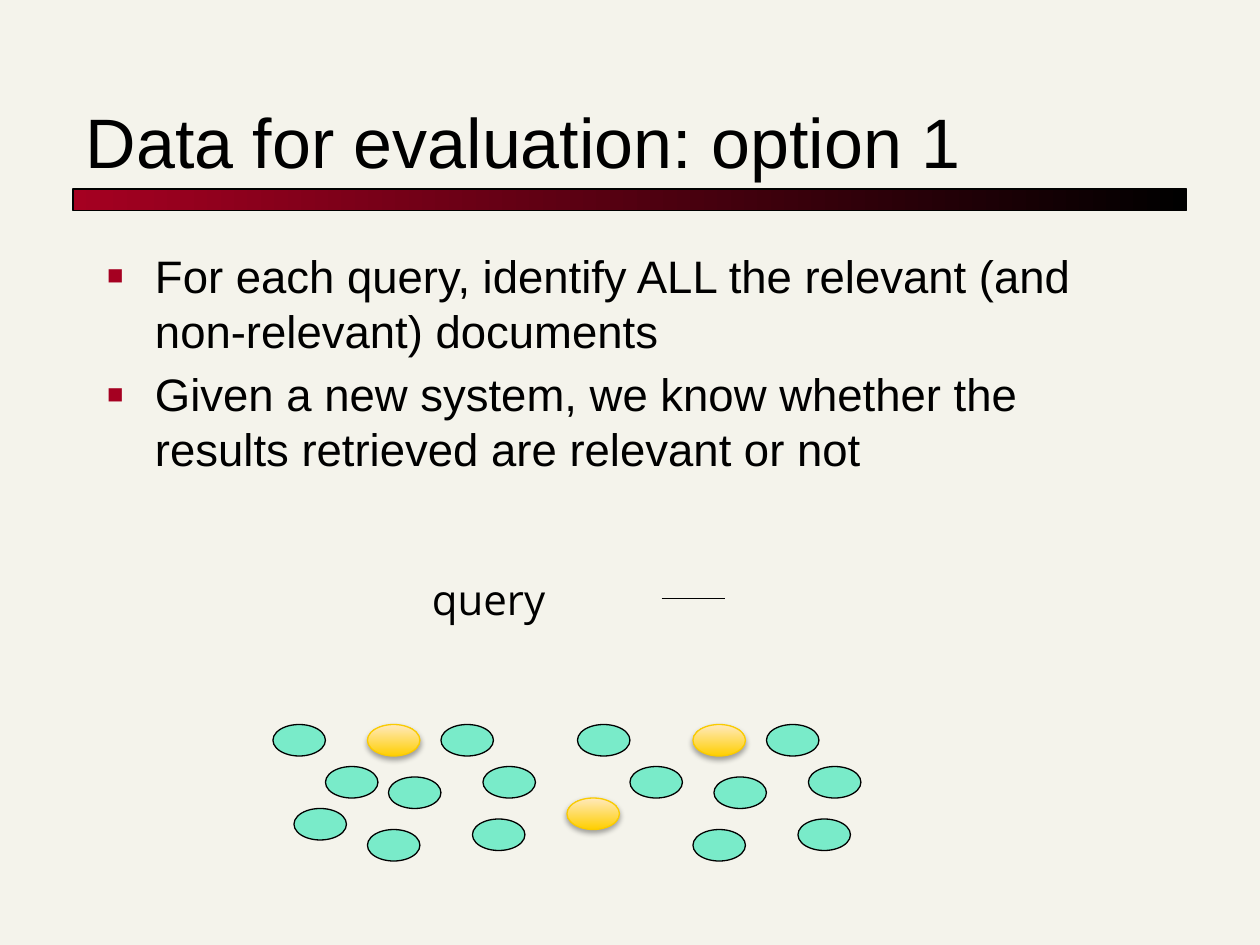
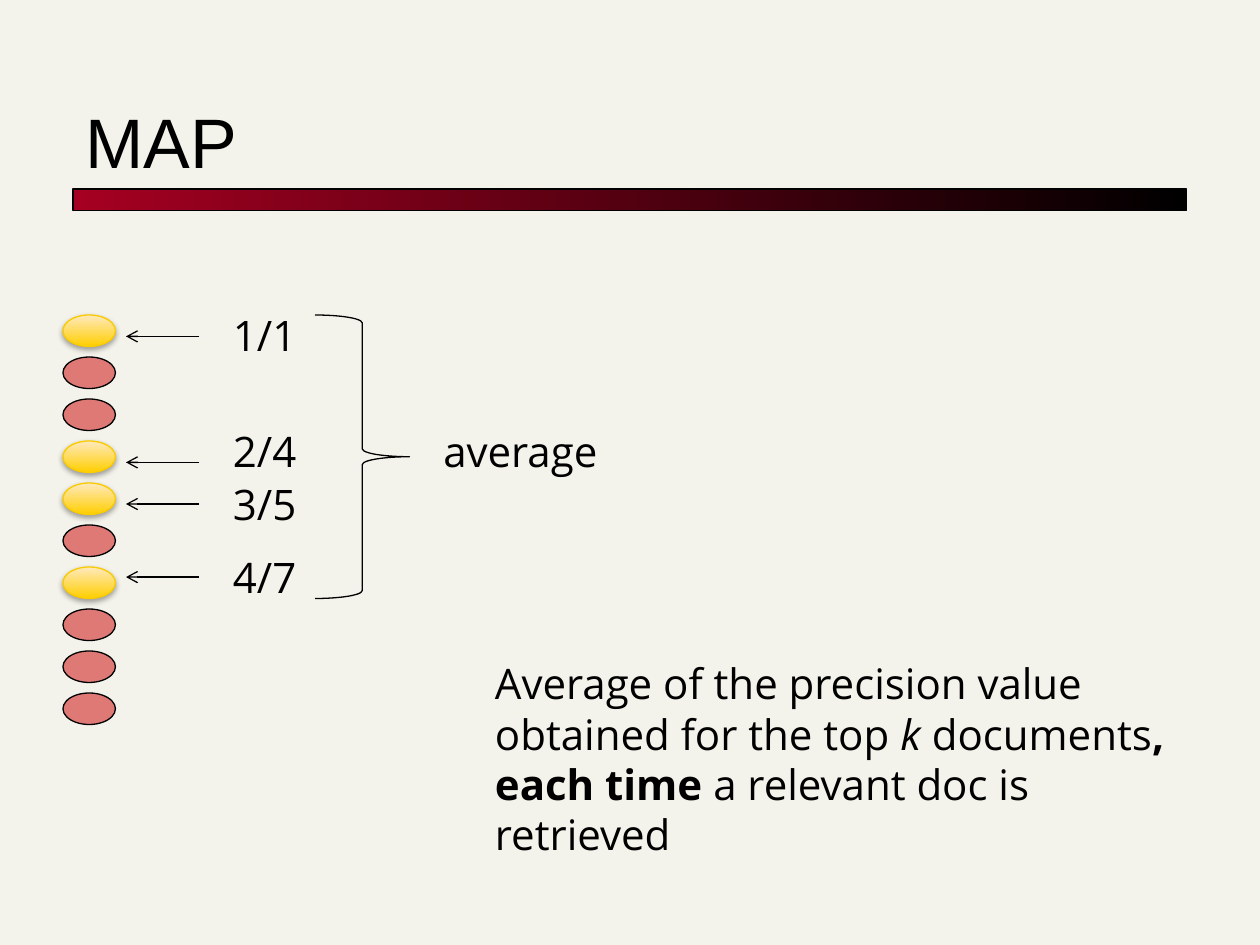
from lxml import etree
from pptx import Presentation
from pptx import util as u
from pptx.dml import color
from pptx.enum import shapes, text
from pptx.oxml import ns

HUES = {"page": "F4F3EB", "ink": "000000", "wine": "A50021", "mint": "00E4A8",
        "red": "CC0000", "gold": "FFCF01", "pale": "FFE9BD", "rim": "FACB00"}
HEAD, BODY = "Arial", "Open Sans"
UNIT = 1 / 12

OPTION = "Data for evaluation: option 1"
POINTS = ["For each query, identify ALL the relevant (and non-relevant) documents",
          "Given a new system, we know whether the results retrieved are relevant or not"]
GOOD = [(35, 69), (54, 76), (66, 69)]
OTHER = [(42, 69), (46, 73), (37, 74), (31, 73), (28, 77), (26, 69), (35, 79),
         (55, 69), (45, 78), (60, 73), (73, 69), (77, 73), (68, 74), (66, 79), (76, 78)]

COUNT = 10
RANKS = [(1, "1/1", 2.67, 2.41), (4, "2/4", 3.67, 3.33),
         (5, "3/5", 4, 3.75), (7, "4/7", 4.58, 4.33)]
MEANING = [["Average of the precision value"],
           ["obtained for the top ", ("k", "i"), " documents", (",", "b")],
           [("each time ", "b"), "a relevant doc is retrieved"]]


def rgb(name):
    return color.RGBColor.from_string(HUES[name])


def inches(*sizes):
    return [u.Inches(size) for size in sizes]


def node(parent, tag, **attrs):
    return etree.SubElement(parent, ns.qn("a:" + tag), attrs)


def write(frame, paras, size=24, font=BODY, wrap=True, anchor=text.MSO_ANCHOR.TOP):
    frame.word_wrap = wrap
    frame.auto_size = text.MSO_AUTO_SIZE.NONE
    frame.vertical_anchor = anchor
    for i, parts in enumerate(paras):
        para = frame.paragraphs[0] if i == 0 else frame.add_paragraph()
        para.alignment = text.PP_ALIGN.LEFT
        for part in parts:
            words, style = (part, "") if isinstance(part, str) else part
            run = para.add_run()
            run.text = words
            run.font.size = u.Pt(size)
            run.font.name = font
            run.font.color.rgb = rgb("ink")
            if style:
                run.font.bold = style == "b"
                run.font.italic = style == "i"


def label(slide, words, x, y, w, h=0.5, **form):
    box = slide.shapes.add_textbox(*inches(x, y, w, h))
    write(box.text_frame, [[words]] if isinstance(words, str) else words, **form)


def place(item, *area):
    item.left, item.top, item.width, item.height = inches(*area)


def edge(item, hue="ink"):
    item.line.color.rgb = rgb(hue)
    item.line.width = u.Pt(0.75)


def blend(shape, first, last, angle):
    shape.fill.gradient()
    shape.fill.gradient_angle = angle
    for stop, hue in zip(shape.fill.gradient_stops, (first, last)):
        stop.color.rgb = rgb(hue)


def draw(slide, kind, *area, hue="ink"):
    shape = slide.shapes.add_shape(kind, *inches(*area))
    edge(shape, hue)
    shape.shadow.inherit = False
    return shape


def dot(slide, col, row, hue):
    gold = hue == "gold"
    oval = draw(slide, shapes.MSO_SHAPE.OVAL, col * UNIT, row * UNIT, 5 * UNIT, 3 * UNIT,
                hue="rim" if gold else "ink")
    props = oval.element.spPr
    if gold:
        blend(oval, "gold", "pale", 90)
        shade = node(props.find(ns.qn("a:effectLst")), "outerShdw", blurRad="40000",
                     dist="23000", dir="5400000", rotWithShape="0")
        node(node(shade, "srgbClr", val=HUES["ink"]), "alpha", val="35000")
    else:
        oval.fill.solid()
        oval.fill.fore_color.rgb = rgb(hue)
        node(props.xpath("a:solidFill/a:srgbClr")[0], "alpha", val="50000")


def rule(slide, x, y, end, arrow=False):
    line = slide.shapes.add_connector(shapes.MSO_CONNECTOR.STRAIGHT, *inches(x, y, end, y))
    edge(line)
    props = line.element.spPr
    if arrow:
        node(props.find(ns.qn("a:ln")), "tailEnd", type="arrow")
    node(props, "effectLst")


def mark(para):
    props = para._p.get_or_add_pPr()
    props.set("marL", str(u.Inches(0.38)))
    props.set("indent", str(u.Inches(-0.38)))
    node(node(props, "buClr"), "srgbClr", val=HUES["wine"])
    node(props, "buSzPct", val="60000")
    node(props, "buFont", typeface=HEAD)
    node(props, "buChar", char="■")


def start(deck, layout, title):
    slide = deck.slides.add_slide(deck.slide_layouts[layout])
    band = draw(slide, shapes.MSO_SHAPE.RECTANGLE, 0.58, 1.5, 8.84, 0.17)
    blend(band, "wine", "ink", 0)
    head = slide.shapes.title
    place(head, 0.58, 0.42, 8.83, 1.08)
    write(head.text_frame, [[title]], size=40, font=HEAD, anchor=text.MSO_ANCHOR.BOTTOM)
    return slide


def option(deck):
    slide = start(deck, 1, OPTION)
    body = slide.placeholders[1]
    place(body, 0.75, 1.92, 8.5, 1.83)
    write(body.text_frame, [[point] for point in POINTS], size=26, font=HEAD)
    for para in body.text_frame.paragraphs:
        mark(para)
    for hue, spots in (("gold", GOOD), ("mint", OTHER)):
        for col, row in spots:
            dot(slide, col, row, hue)
    rule(slide, 5.25, 4.75, 5.75)
    label(slide, "query", 3.33, 4.5, 1.13, wrap=False)


def ranking(deck):
    slide = start(deck, 5, "MAP")
    hits = [rank for rank, *rest in RANKS]
    for i in range(COUNT):
        dot(slide, 6, 30 + 4 * i, "gold" if i + 1 in hits else "red")
    for rank, ratio, level, top in RANKS:
        rule(slide, 1.58, level, 1, arrow=True)
        label(slide, ratio, 1.75, top, 0.81)
    brace = draw(slide, shapes.MSO_SHAPE.RIGHT_BRACE, 2.5, 2.5, 0.75, 2.25)
    brace.fill.background()
    label(slide, "average", 3.42, 3.33, 1.47, wrap=False)
    label(slide, MEANING, 3.83, 5.17, 5.89, 2.12)


def main():
    deck = Presentation()
    deck.slide_width, deck.slide_height = inches(10, 7.5)
    fill = deck.slide_master.background.fill
    fill.solid()
    fill.fore_color.rgb = rgb("page")
    option(deck)
    ranking(deck)
    deck.save("out.pptx")


if __name__ == "__main__":
    main()
